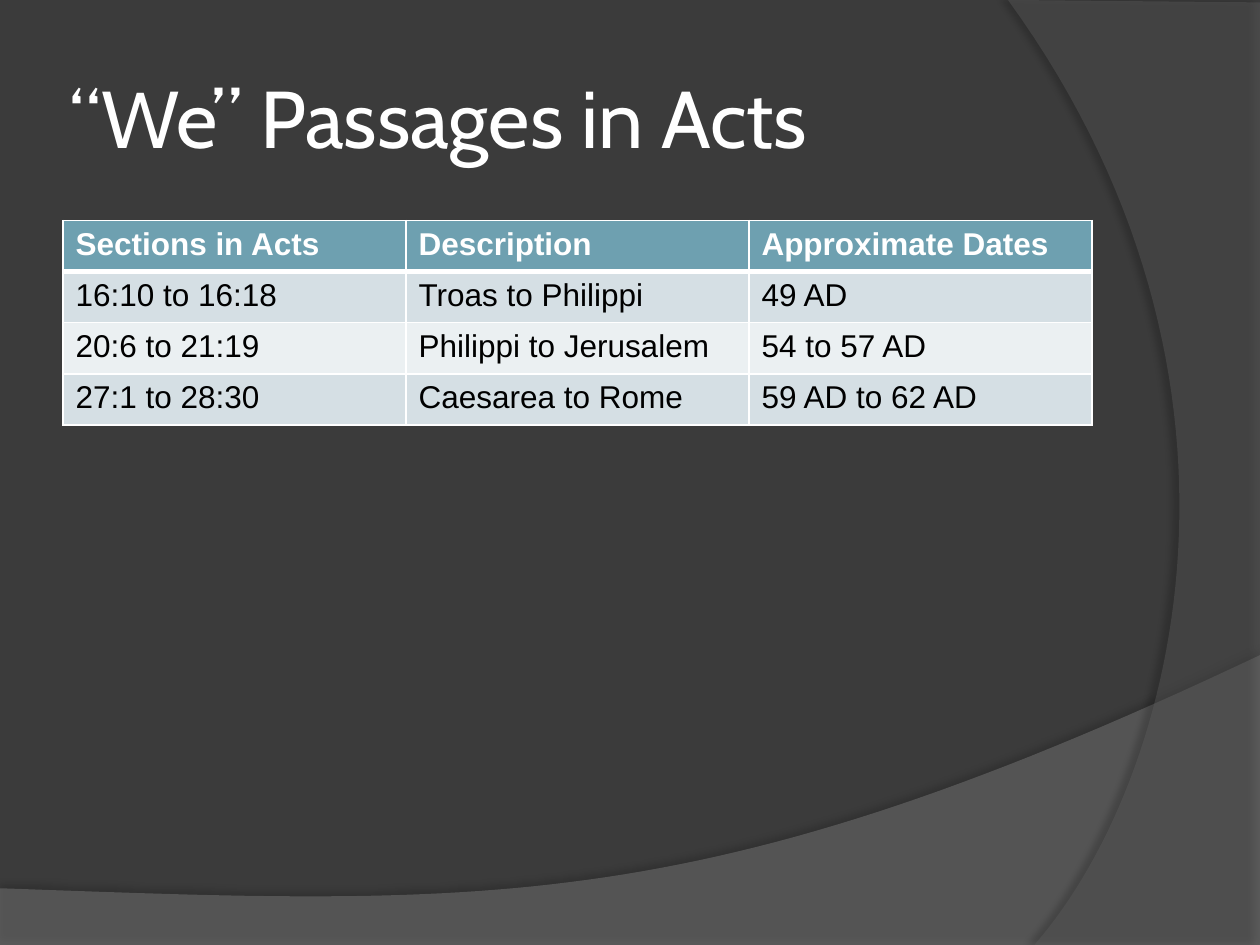
"""Build a slide with a table of the "We" passages in Acts."""
from dataclasses import dataclass

from lxml import etree
from pptx import Presentation
from pptx.dml.color import RGBColor
from pptx.enum.text import MSO_ANCHOR
from pptx.oxml.ns import qn
from pptx.util import Pt

MIDDLE = MSO_ANCHOR.MIDDLE


@dataclass(frozen=True)
class Theme:
    back: str = "3B3B3B"
    wave: str = "7F7F7F"
    arc: str = "5E5E5E"
    shade: str = "000000"
    white: str = "FFFFFF"
    ink: str = "000000"
    head: str = "6EA0B0"
    bands: tuple = ("D5DFE4", "EBF0F2")
    title_font: str = "Cabin"
    body_font: str = "Arial"
    title_size: int = 46
    body_size: int = 18


THEME = Theme()
ROWS = (
    ("Sections in Acts", "Description", "Approximate Dates"),
    ("16:10 to 16:18", "Troas to Philippi", "49 AD"),
    ("20:6 to 21:19", "Philippi to Jerusalem", "54 to 57 AD"),
    ("27:1 to 28:30", "Caesarea to Rome", "59 AD to 62 AD"),
)


def paint(fill, color):
    fill.solid()
    fill.fore_color.rgb = RGBColor.from_string(color)


def style(frame, font, size, color, bold=False):
    for part in frame.paragraphs:
        for run in part.runs:
            run.font.name = font
            run.font.size = Pt(size)
            run.font.bold = bold
            run.font.color.rgb = RGBColor.from_string(color)


def add_color(parent, color, alpha=100):
    node = etree.SubElement(parent, qn("a:srgbClr"), val=color)
    etree.SubElement(node, qn("a:alpha"), val=str(alpha * 1000))


def curve(start, one, two, end, steps=60):
    for i in range(steps + 1):
        t = i / steps
        u = 1 - t
        yield tuple(u**3 * a + 3 * u * u * t * b + 3 * u * t * t * c + t**3 * d
                    for a, b, c, d in zip(start, one, two, end))


def add_sweep(slide, edge, bend, color, alpha, shade, dist, turn):
    points = [(Pt(x), Pt(y)) for x, y in (*edge, *curve(*bend))]
    pen = slide.shapes.build_freeform(*points[0])
    pen.add_line_segments(points[1:], close=True)
    shape = pen.convert_to_shape()
    shape.line.fill.background()
    paint(shape.fill, color)
    props = shape._element.spPr
    tint = props.find(qn("a:solidFill")).find(qn("a:srgbClr"))
    etree.SubElement(tint, qn("a:alpha"), val=str(alpha * 1000))
    shape.shadow.inherit = False
    cast = etree.SubElement(
        props.find(qn("a:effectLst")), qn("a:outerShdw"), blurRad=str(Pt(4)),
        dist=str(Pt(dist)), dir=str(turn * 60000), algn="ctr", rotWithShape="0")
    add_color(cast, THEME.shade, shade)


def add_title(slide, text):
    box = slide.shapes.add_textbox(Pt(36), Pt(21.6), Pt(588), Pt(90))
    frame = box.text_frame
    frame.word_wrap = True
    frame.vertical_anchor = MIDDLE
    frame.margin_left = frame.margin_right = Pt(3.6)
    frame.text = text
    style(frame, THEME.title_font, THEME.title_size, THEME.white)


def add_rules(cell, widths):
    props = cell._tc.get_or_add_tcPr()
    for side, width in zip("LRTB", widths):
        line = etree.SubElement(props, qn(f"a:ln{side}"), w=str(Pt(width)))
        add_color(etree.SubElement(line, qn("a:solidFill")), THEME.white)


def add_grid(slide, rows):
    high = 29.2
    table = slide.shapes.add_table(len(rows), len(rows[0]), Pt(36), Pt(126),
                                   Pt(588), Pt(high * len(rows))).table
    for r, row in enumerate(rows):
        table.rows[r].height = Pt(high)
        top = r == 0
        fill = THEME.head if top else THEME.bands[(r - 1) % 2]
        for c, text in enumerate(row):
            cell = table.cell(r, c)
            add_rules(cell, (1, 1, 3 if r == 1 else 1, 3 if top else 1))
            paint(cell.fill, fill)
            cell.text_frame.text = text
            style(cell.text_frame, THEME.body_font, THEME.body_size,
                  THEME.white if top else THEME.ink, top)


def main():
    deck = Presentation()
    deck.slide_width, deck.slide_height = Pt(720), Pt(540)
    slide = deck.slides.add_slide(deck.slide_layouts[6])
    paint(slide.background.fill, THEME.back)
    add_sweep(slide, [(0, 540), (720, 540)],
              [(720, 374.4), (402.5, 524.9), (281.5, 517.7), (0, 507.6)],
              THEME.wave, 45, 35, 3.5, 270)
    add_sweep(slide, [(720, 1.4), (720, 540)],
              [(591.1, 540), (673.2, 445.7), (733, 216), (576, 0)],
              THEME.arc, 40, 45, 4, 180)
    add_title(slide, "“We” Passages in Acts")
    add_grid(slide, ROWS)
    deck.save("out.pptx")


if __name__ == "__main__":
    main()
